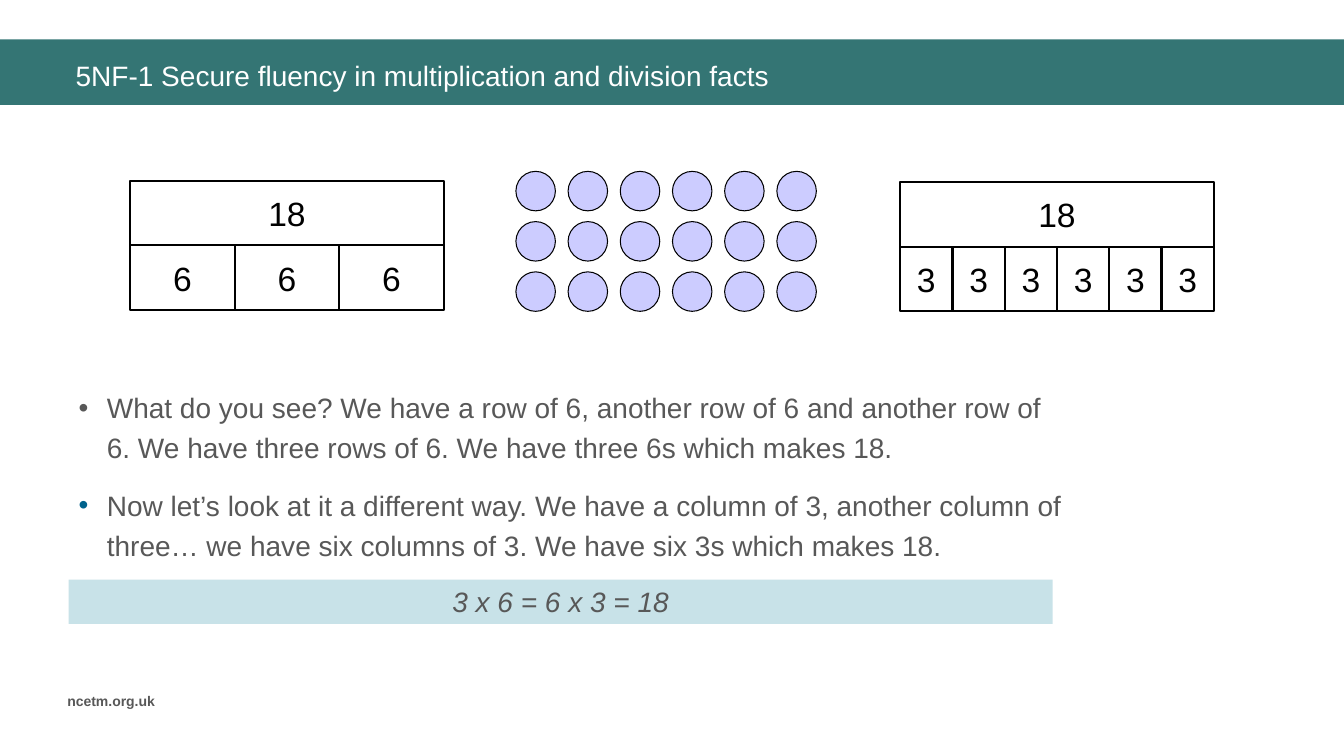
from dataclasses import dataclass
from lxml.etree import SubElement as Sub
from pptx import Presentation
from pptx.dml.color import RGBColor as RGB
from pptx.enum.shapes import MSO_SHAPE as Kind
from pptx.enum.text import MSO_ANCHOR as Anchor, MSO_AUTO_SIZE as Auto, PP_ALIGN as Align
from pptx.oxml.ns import qn
from pptx.util import Pt


@dataclass(frozen=True)
class Theme:
    font: str = "Arial"
    teal: str = "347574"
    pale: str = "C8E2E8"
    lilac: str = "CCCCFF"
    blue: str = "00628C"
    grey: str = "585858"
    black: str = "000000"
    white: str = "FFFFFF"
    small: int = 10
    body: int = 20
    large: int = 24


THEME = Theme()


def write(frame, text, size=THEME.body, color=THEME.grey, bold=False, italic=False,
          align=Align.LEFT, anchor=Anchor.MIDDLE, inset=(7.2, 3.6), first=True):
    """Set the first paragraph of a frame, or add another, and return it."""
    frame.word_wrap = True
    frame.auto_size = Auto.NONE
    frame.vertical_anchor = anchor
    frame.margin_left = frame.margin_right = Pt(inset[0])
    frame.margin_top = frame.margin_bottom = Pt(inset[1])
    para = frame.paragraphs[0] if first else frame.add_paragraph()
    para.alignment = align
    run = para.add_run()
    run.text = text
    font = run.font
    font.name, font.size, font.color.rgb = THEME.font, Pt(size), RGB.from_string(color)
    font.bold, font.italic = bold, italic
    return para


def draw(slide, kind, box, fill=None, line=None):
    """Add a preset shape; line is a width in points, or None."""
    shape = slide.shapes.add_shape(kind, *map(Pt, box))
    shape.shadow.inherit = False
    if fill:
        shape.fill.solid()
        shape.fill.fore_color.rgb = RGB.from_string(fill)
    else:
        shape.fill.background()
    if line:
        shape.line.width = Pt(line)
        shape.line.color.rgb = RGB.from_string(THEME.black)
    else:
        shape.line.fill.background()
    return shape


def header(slide, box, text):
    left, top, width, height = box
    band = draw(slide, Kind.RECTANGLE, box, THEME.teal)
    title = slide.shapes.title
    title.element.addprevious(band.element)
    title.left, title.top = Pt(left + 46.8), Pt(top + 8.6)
    title.width, title.height = Pt(width - 73), Pt(height - 13)
    write(title.text_frame, text, color=THEME.white)


def model(slide, box, whole, part, count):
    """Draw a bar model: a whole above equal parts."""
    left, top, width, height = box
    row, step = height / 2, width / count
    cells = [(whole, (left, top, width, row))]
    cells += [(part, (left + i * step, top + row, step, row)) for i in range(count)]
    for text, cell in cells:
        shape = draw(slide, Kind.RECTANGLE, cell, line=1.5)
        write(shape.text_frame, text, size=THEME.large, color=THEME.black,
              align=Align.CENTER, inset=(0, 0))


def array(slide, box, rows, cols, size):
    left, top, width, height = box
    across, down = (width - size) / (cols - 1), (height - size) / (rows - 1)
    for row in range(rows):
        for col in range(cols):
            spot = (left + col * across, top + row * down, size, size)
            draw(slide, Kind.OVAL, spot, THEME.lilac, 0.75)


def bullet(para, color):
    props = para._p.get_or_add_pPr()
    props.set("marL", str(Pt(20.2)))
    props.set("indent", str(-Pt(20.2)))
    Sub(Sub(props, qn("a:buClr")), qn("a:srgbClr"), val=color)
    Sub(props, qn("a:buFont"), typeface=THEME.font)
    Sub(props, qn("a:buChar"), char="•")


def points(slide, box, items):
    frame = slide.shapes.add_textbox(*map(Pt, box)).text_frame
    for i, (text, color) in enumerate(items):
        para = write(frame, text, anchor=Anchor.TOP, first=i == 0)
        bullet(para, color)
        para.line_spacing = 1.2
        para.space_before, para.space_after = Pt(6 if i else 0), Pt(6)


def answer(slide, box, text):
    bar = draw(slide, Kind.RECTANGLE, box, THEME.pale)
    write(bar.text_frame, text, italic=True, align=Align.CENTER)


def footer(slide, box, text):
    note = slide.shapes.add_textbox(*map(Pt, box))
    write(note.text_frame, text, size=THEME.small, bold=True)


def main():
    deck = Presentation()
    deck.slide_width, deck.slide_height = Pt(960), Pt(540)
    slide = deck.slides.add_slide(deck.slide_layouts[5])
    header(slide, (0, 28.2, 960, 46.8),
           "5NF-1 Secure fluency in multiplication and division facts")
    model(slide, (93, 129, 224, 92.4), "18", "6", 3)
    array(slide, (368.5, 122.4, 214.6, 100), 3, 6, 28.2)
    model(slide, (643, 130, 224, 92.4), "18", "3", 6)
    points(slide, (49, 270.7, 720.7, 104.4), [
        ("What do you see? We have a row of 6, another row of 6 and another row of 6. "
         "We have three rows of 6. We have three 6s which makes 18.", THEME.grey),
        ("Now let’s look at it a different way. We have a column of 3, another column of "
         "three… we have six columns of 3. We have six 3s which makes 18.", THEME.blue),
    ])
    answer(slide, (49, 414, 703, 31.6), "3 x 6 = 6 x 3 = 18")
    footer(slide, (41, 491, 87, 19.4), "ncetm.org.uk")
    deck.save("out.pptx")


if __name__ == "__main__":
    main()
